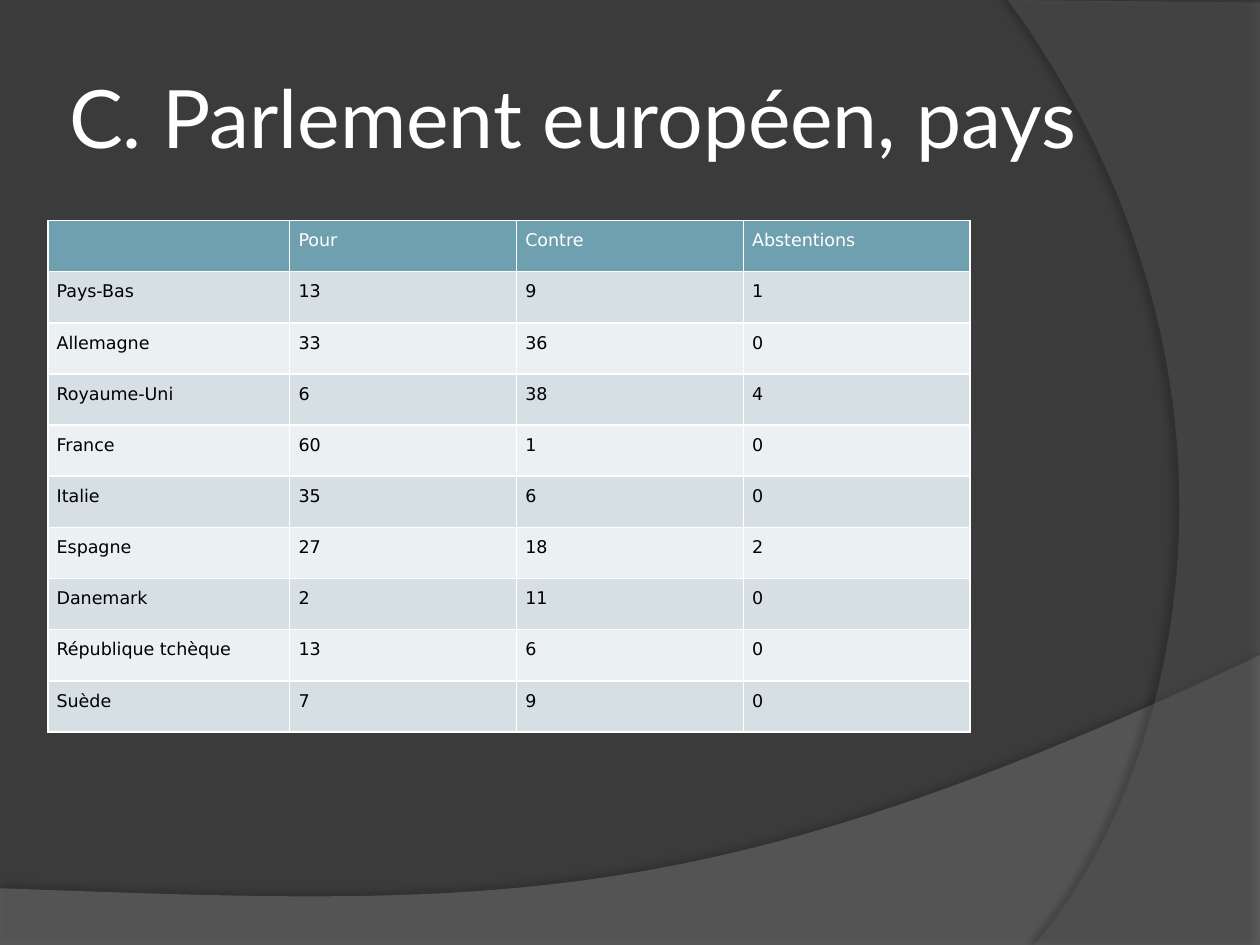
from lxml import etree
from pptx import Presentation
from pptx.dml.color import RGBColor
from pptx.enum.text import MSO_ANCHOR, PP_ALIGN
from pptx.oxml import parse_xml
from pptx.oxml.ns import nsdecls, qn
from pptx.util import Inches, Pt

LEFT, JUSTIFY = PP_ALIGN.LEFT, PP_ALIGN.JUSTIFY
MIDDLE = MSO_ANCHOR.MIDDLE
BACKGROUND = RGBColor(0x3B, 0x3B, 0x3B)
WAVE = RGBColor(0x7F, 0x7F, 0x7F)
ARC = RGBColor(0x5E, 0x5E, 0x5E)
WHITE = RGBColor(0xFF, 0xFF, 0xFF)
BLACK = RGBColor(0x00, 0x00, 0x00)
HEADER = RGBColor(0x6E, 0xA0, 0xB0)
BANDS = [RGBColor(0xEB, 0xF0, 0xF2), RGBColor(0xD5, 0xDF, 0xE4)]
STEPS = 48


def put_text(tf, text, font, size, color, align=LEFT, spacing=1.0):
    p = tf.paragraphs[0]
    p.alignment = align
    p.line_spacing = spacing
    r = p.add_run()
    r.text = text
    r.font.name = font
    r.font.size = Pt(size)
    r.font.color.rgb = color


def curve_points(p0, p1, p2, p3):
    points = []
    for i in range(1, STEPS + 1):
        t = i / STEPS
        u = 1 - t
        points.append([u**3 * a + 3 * u**2 * t * b + 3 * u * t**2 * c + t**3 * d
                       for a, b, c, d in zip(p0, p1, p2, p3)])
    return points


prs = Presentation()
prs.slide_width, prs.slide_height = Inches(10), Inches(7.5)
s = prs.slides.add_slide(prs.slide_layouts[6])
s.background.fill.solid()
s.background.fill.fore_color.rgb = BACKGROUND

wave = [(0, 7.05), (0, 7.51), (10, 7.51), (10, 5.2)]
wave += curve_points((10, 5.2), (5.59, 7.29), (3.91, 7.19), (0, 7.05))
arc = [(10, 0.02), (10, 7.5), (8.21, 7.5)]
arc += curve_points((8.21, 7.5), (9.35, 6.19), (10.18, 3), (8, 0))

for points, color, alpha, shadow_alpha, distance, angle in [
    (wave, WAVE, 45, 35, 3.5, 270),
    (arc, ARC, 40, 45, 4, 180),
]:
    corners = [(Inches(x), Inches(y)) for x, y in points]
    builder = s.shapes.build_freeform(*corners[0], scale=1.0)
    builder.add_line_segments(corners[1:], close=True)
    sp = builder.convert_to_shape()
    sp.fill.solid()
    sp.fill.fore_color.rgb = color
    sp.line.fill.background()
    sp.shadow.inherit = False
    spPr = sp._element.spPr
    clr = spPr.find(qn("a:solidFill")).find(qn("a:srgbClr"))
    etree.SubElement(clr, qn("a:alpha"), val=str(alpha * 1000))
    spPr.find(qn("a:effectLst")).append(parse_xml(
        f'<a:outerShdw {nsdecls("a")} blurRad="{Pt(4)}" dist="{Pt(distance)}" '
        f'dir="{angle * 60000}" rotWithShape="0"><a:srgbClr val="{BLACK}">'
        f'<a:alpha val="{shadow_alpha * 1000}"/></a:srgbClr></a:outerShdw>'))

title = s.shapes.add_textbox(Inches(0.5), Inches(0.3), Inches(8.17), Inches(1.25))
tf = title.text_frame
tf.word_wrap = True
tf.vertical_anchor = MIDDLE
tf.margin_left = tf.margin_right = tf.margin_top = tf.margin_bottom = Inches(0.05)
put_text(tf, "C. Parlement européen, pays", font="Lato", size=46, color=WHITE)

votes = [
    ("", "Pour", "Contre", "Abstentions"),
    ("Pays-Bas", 13, 9, 1),
    ("Allemagne", 33, 36, 0),
    ("Royaume-Uni", 6, 38, 4),
    ("France", 60, 1, 0),
    ("Italie", 35, 6, 0),
    ("Espagne", 27, 18, 2),
    ("Danemark", 2, 11, 0),
    ("République tchèque", 13, 6, 0),
    ("Suède", 7, 9, 0),
]
widths = [1.92, 1.8, 1.8, 1.8]
table = s.shapes.add_table(len(votes), len(widths), Inches(0.38), Inches(1.75),
                           Inches(sum(widths)), Inches(4.06)).table
for column, width in zip(table.columns, widths):
    column.width = Inches(width)

for i, row in enumerate(votes):
    for j, value in enumerate(row):
        cell = table.cell(i, j)
        cell.margin_left = cell.margin_right = Inches(0.07)
        cell.margin_top = cell.margin_bottom = 0
        cell.fill.solid()
        cell.fill.fore_color.rgb = BANDS[i % 2] if i else HEADER
        put_text(cell.text_frame, str(value), font="DejaVu Sans", size=10,
                 color=BLACK if i else WHITE, align=JUSTIFY, spacing=1.5)
        tcPr = cell._tc.get_or_add_tcPr()
        for k, side in enumerate(["lnL", "lnR", "lnT", "lnB"]):
            tcPr.insert(k, parse_xml(
                f'<a:{side} {nsdecls("a")} w="{Pt(1)}"><a:solidFill>'
                f'<a:srgbClr val="{WHITE}"/></a:solidFill></a:{side}>'))

prs.save("out.pptx")
